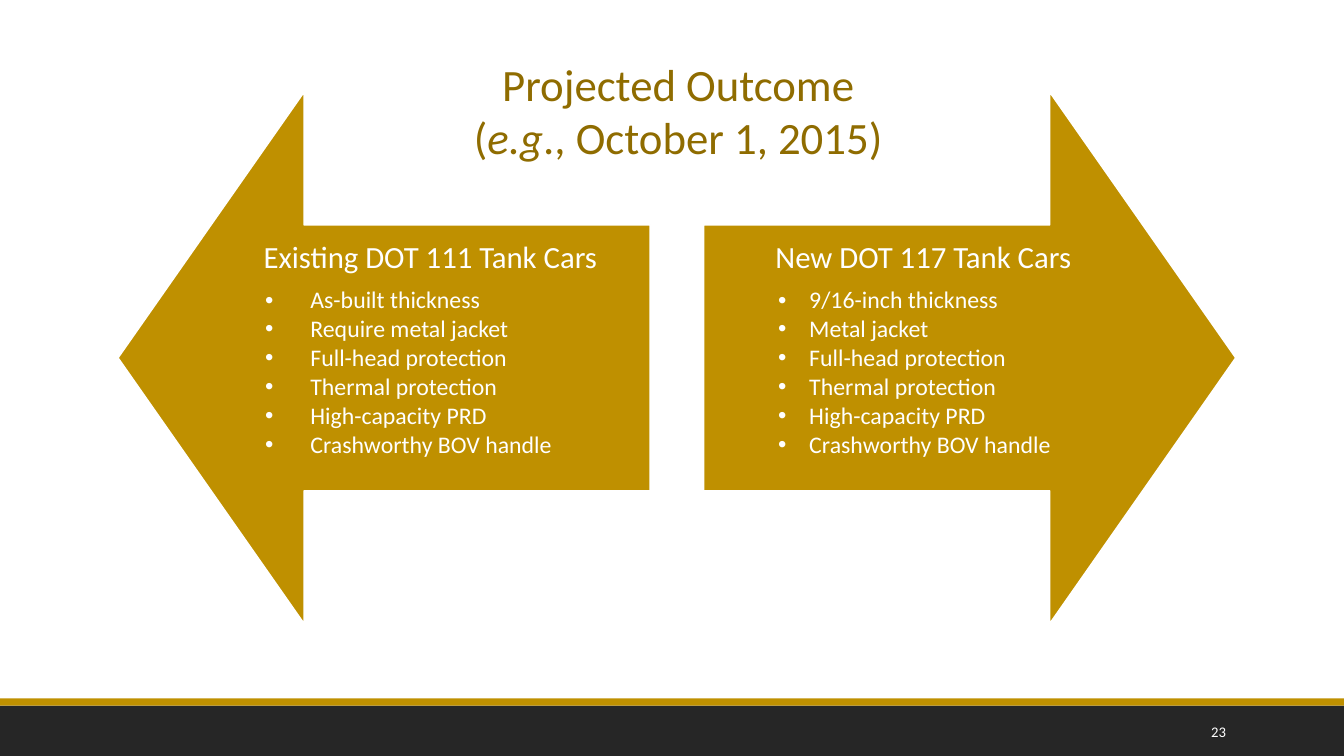
from dataclasses import dataclass

from lxml.etree import SubElement
from pptx import Presentation
from pptx.dml.color import RGBColor
from pptx.enum.shapes import MSO_SHAPE
from pptx.enum.text import MSO_ANCHOR, MSO_AUTO_SIZE, PP_ALIGN
from pptx.oxml.ns import qn
from pptx.util import Pt

GOLD = "BF9000"
DARK_GOLD = "8F6C00"
CHARCOAL = "262626"
WHITE = "FFFFFF"
FONT = "Calibri"

PAGE_WIDTH, PAGE_HEIGHT = 960, 540
ARROW_TOP, ARROW_SIZE = 65.5, 380.2
LIST_TOP, LIST_WIDTH, LIST_HEIGHT = 160.6, 313.9, 190.1
LIST_INSET = 12.25
SHARED_FEATURES = ["Full-head protection", "Thermal protection",
                   "High-capacity PRD", "Crashworthy BOV handle"]


@dataclass
class CarArrow:
    left: float
    rotation: int
    list_left: float
    heading: str
    features: list[str]
    indent: float
    hanging: float


CAR_ARROWS = [
    CarArrow(84.2, 270, 150.5, "Existing DOT 111 Tank Cars",
             ["As-built thickness", "Require metal jacket"] + SHARED_FEATURES,
             59, 32.4),
    CarArrow(502.6, 90, 502.6, "New DOT 117 Tank Cars",
             ["9/16-inch thickness", "Metal jacket"] + SHARED_FEATURES,
             63.2, 22.3),
]


def rgb(color: str) -> RGBColor:
    return RGBColor.from_string(color)


def add_filled_shape(page, kind, left: float, top: float, width: float,
                     height: float, color: str):
    shape = page.shapes.add_shape(kind, Pt(left), Pt(top), Pt(width), Pt(height))
    shape.shadow.inherit = False
    shape.fill.solid()
    shape.fill.fore_color.rgb = rgb(color)
    shape.line.fill.background()
    return shape


def add_text_frame(page, left: float, top: float, width: float, height: float,
                   text: str):
    box = page.shapes.add_textbox(Pt(left), Pt(top), Pt(width), Pt(height))
    frame = box.text_frame
    frame.word_wrap = True
    frame.text = text
    return frame


def format_para(para, size: float, color: str, align: PP_ALIGN) -> None:
    para.alignment = align
    for span in para.runs:
        span.font.name = FONT
        span.font.size = Pt(size)
        span.font.color.rgb = rgb(color)


def add_bullet(para, indent: float, hanging: float) -> None:
    properties = para._p.get_or_add_pPr()
    properties.set("marL", str(Pt(indent)))
    properties.set("indent", str(-Pt(hanging)))
    SubElement(properties, qn("a:buFont"), typeface="Arial")
    SubElement(properties, qn("a:buChar"), char="•")


def add_car_arrow(page, car: CarArrow) -> None:
    arrow = add_filled_shape(page, MSO_SHAPE.UP_ARROW, car.left, ARROW_TOP,
                             ARROW_SIZE, ARROW_SIZE, GOLD)
    arrow.adjustments[0] = 0.5
    arrow.adjustments[1] = 0.35
    arrow.rotation = car.rotation
    arrow.line.color.rgb = rgb(WHITE)
    arrow.line.width = Pt(1.25)

    frame = add_text_frame(page, car.list_left, LIST_TOP, LIST_WIDTH, LIST_HEIGHT,
                           "\n".join([car.heading] + car.features))
    frame.margin_left = frame.margin_right = Pt(LIST_INSET)
    frame.margin_top = frame.margin_bottom = Pt(LIST_INSET)
    heading, *features = frame.paragraphs
    heading.line_spacing = 0.9
    heading.space_after = Pt(9.4)
    format_para(heading, 22, WHITE, PP_ALIGN.CENTER)
    for para in features:
        para.level = 1
        para.line_spacing = 0.9
        para.space_after = Pt(2.2)
        format_para(para, 17, WHITE, PP_ALIGN.LEFT)
        add_bullet(para, car.indent, car.hanging)


def add_title(page) -> None:
    frame = add_text_frame(page, 329.8, 36.7, 309.6, 85, "Projected Outcome")
    frame.word_wrap = False
    frame.auto_size = MSO_AUTO_SIZE.SHAPE_TO_FIT_TEXT
    date_para = frame.add_paragraph()
    for text in ("(", "e.g", "., October 1, 2015)"):
        span = date_para.add_run()
        span.text = text
        span.font.italic = text == "e.g"
    for para in frame.paragraphs:
        format_para(para, 32, DARK_GOLD, PP_ALIGN.CENTER)


def add_footer(page) -> None:
    add_filled_shape(page, MSO_SHAPE.RECTANGLE, 0, 504, PAGE_WIDTH, 36, CHARCOAL)
    add_filled_shape(page, MSO_SHAPE.RECTANGLE, 0, 498.8, PAGE_WIDTH, 5.2, GOLD)
    frame = add_text_frame(page, 779.8, 508.5, 103, 28.8, "23")
    frame.vertical_anchor = MSO_ANCHOR.MIDDLE
    format_para(frame.paragraphs[0], 10.5, WHITE, PP_ALIGN.RIGHT)


def main() -> None:
    deck = Presentation()
    deck.slide_width, deck.slide_height = Pt(PAGE_WIDTH), Pt(PAGE_HEIGHT)
    page = deck.slides.add_slide(deck.slide_layouts[6])
    add_footer(page)
    for car in CAR_ARROWS:
        add_car_arrow(page, car)
    add_title(page)
    deck.save("out.pptx")


if __name__ == "__main__":
    main()
